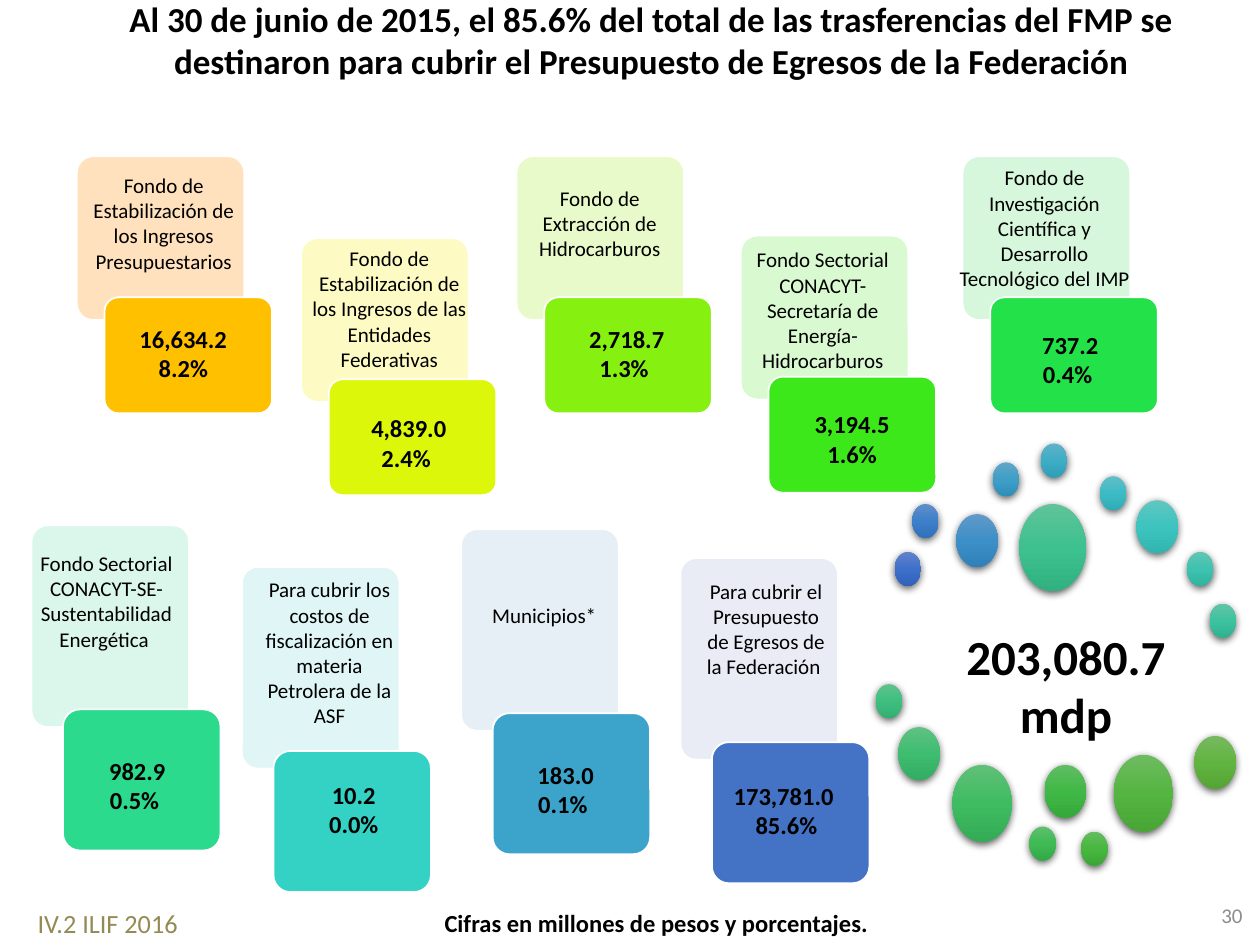
from copy import deepcopy

from pptx import Presentation
from pptx.dml.color import RGBColor
from pptx.enum import shapes, text
from pptx.oxml import parse_xml
from pptx.oxml.ns import nsdecls, qn
from pptx.util import Inches, Pt

FONT = "Calibri"
ALIGN = text.PP_ALIGN
MIDDLE = text.MSO_ANCHOR.MIDDLE
SHAPE = shapes.MSO_SHAPE

# Per row: size of the back panel, offset and size of the front panel, value width
UPPER = {"back": (1.33, 1.3), "front": (0.22, 1.12, 1.33, 0.92), "value_width": 1.33}
LOWER = {"back": (1.25, 1.6), "front": (0.25, 1.46, 1.25, 1.12), "value_width": 1.16}

# Left, top, back colour, front colour, label, label box, value lines, value offset
UPPER_CARDS = [
    (0.61, 1.24, "FFE2BD", "FFC000", "Fondo de Estabilización de los Ingresos Presupuestarios",
     (-0.03, 0.08, 1.44, 0.91), ["16,634.2", "8.2%"], (0.18, 1.28)),
    (2.39, 1.89, "FDFBC3", "DCF709",
     "Fondo de Estabilización de los Ingresos de las Entidades Federativas",
     (-0.05, 0.01, 1.5, 1.11), ["4,839.0", "2.4% "], (0.19, 1.34)),
    (4.1, 1.24, "E9FACA", "86F011", "Fondo de Extracción de Hidrocarburos",
     (-0.01, 0.18, 1.34, 0.71), ["2,718.7", "1.3% "], (0.21, 1.28)),
    (5.88, 1.87, "D9F9D0", "3CE81A",
     "Fondo Sectorial CONACYT-Secretaría de Energía-Hidrocarburos",
     (-0.06, 0.04, 1.42, 1.11), ["3,194.5 ", "1.6% "], (0.24, 1.33)),
    (7.64, 1.24, "D6F7DB", "23E148",
     "Fondo de Investigación Científica y Desarrollo Tecnológico del IMP",
     (-0.14, 0.02, 1.58, 1.11), ["737.2", "0.4% "], (0.19, 1.33)),
]
LOWER_CARDS = [
    (0.25, 4.17, "DBF6EA", "2BDA8C", "Fondo Sectorial CONACYT-SE-Sustentabilidad Energética ",
     (-0.03, 0.15, 1.25, 1.11), ["982.9", "0.5% "], (0.26, 1.78)),
    (1.92, 4.5, "E0F5F5", "33D2C5",
     "Para cubrir los costos de fiscalización en materia Petrolera de la ASF",
     (0.07, 0.03, 1.25, 1.31), ["10.2 ", "0.0% "], (0.33, 1.64)),
    (3.66, 4.2, "E5EFF5", "3CA3CB", "Municipios*",
     (0.07, 0.53, 1.18, 0.3), ["183.0", "0.1% "], (0.25, 1.78)),
    (5.4, 4.43, "E9ECF5", "4472C4", "Para cubrir el Presupuesto de Egresos de la Federación ",
     (0.09, 0.11, 1.18, 0.91), ["173,781.0", " 85.6%"], (0.24, 1.72)),
]

DOT_SIZES = {"S": (0.21, 0.27), "M": (0.33, 0.42), "L": (0.47, 0.61), "XL": (0.53, 0.69)}
# Offset in the ring, size, gradient colours from top to bottom
DOTS = [
    (0.15, 0.86, "S", "6183CB 3E70CA 3062BB"),
    (0.29, 0.48, "S", "618ECA 3D80C9 3071BA"),
    (0.64, 0.56, "M", "619AC9 3D8FC8 3080B9"),
    (0.93, 0.15, "S", "61A6C8 3D9EC7 308FB8"),
    (1.31, 0, "S", "61B2C7 3DADC6 309EB7"),
    (1.78, 0.26, "S", "61BEC7 3DBBC5 30ACB6"),
    (2.07, 0.45, "M", "60C6C1 3DC4BF 30B5B0"),
    (2.47, 0.86, "S", "60C5B4 3DC3AF 30B39F"),
    (2.65, 1.27, "S", "60C4A6 3DC29F 31B28F"),
    (1.14, 0.48, "XL", "60C39A 3DC18F 31B080"),
    (0, 1.91, "S", "60C28E 3EBF7F 32AF71"),
    (0.18, 2.25, "M", "60C182 3EBD70 32AD63"),
    (0.61, 2.55, "L", "60C077 3FBC62 33AC55"),
    (1.22, 3.04, "S", "60BF6D 3FBA54 33AA47"),
    (1.34, 2.55, "M", "60BD64 40B846 34A93A"),
    (1.63, 3.08, "S", "65BC61 48B740 3CA735"),
    (1.89, 2.47, "L", "6EBB61 55B541 49A635"),
    (2.53, 2.32, "M", "77B961 62B441 55A436"),
]


def color(hex_code):
    return RGBColor.from_string(hex_code)


def add_text(slide, box, lines, *, size, fill="000000", bold=False,
             align=ALIGN.CENTER, anchor=text.MSO_ANCHOR.TOP, insets=(0.1, 0.05)):
    frame = slide.shapes.add_textbox(*map(Inches, box)).text_frame
    frame.word_wrap = True
    frame.vertical_anchor = anchor
    frame.margin_left = frame.margin_right = Inches(insets[0])
    frame.margin_top = frame.margin_bottom = Inches(insets[1])
    for number, line in enumerate(lines):
        para = frame.add_paragraph() if number else frame.paragraphs[0]
        para.alignment = align
        span = para.add_run()
        span.text = line
        span.font.name = FONT
        span.font.size = Pt(size)
        span.font.bold = bold
        span.font.color.rgb = color(fill)


def add_panel(slide, box, fill, rounding):
    panel = slide.shapes.add_shape(SHAPE.ROUNDED_RECTANGLE, *map(Inches, box))
    panel.shadow.inherit = False
    panel.adjustments[0] = rounding
    panel.fill.solid()
    panel.fill.fore_color.rgb = color(fill)
    panel.line.color.rgb = color("FFFFFF")
    panel.line.width = Pt(1)


def add_card(slide, layout, left, top, back_fill, front_fill, label, label_box,
             value, value_offset):
    def inside(x, y, width, height):
        return left + x, top + y, width, height

    add_panel(slide, inside(0, 0, *layout["back"]), back_fill, 0.1)
    add_panel(slide, inside(*layout["front"]), front_fill, 0.12)
    add_text(slide, inside(*label_box), [label], size=12)
    add_text(slide, inside(*value_offset, layout["value_width"], 0.57), value,
             size=14, bold=True)


def add_dot(slide, box, fills):
    dot = slide.shapes.add_shape(SHAPE.OVAL, *map(Inches, box))
    dot.line.fill.background()
    dot.fill.gradient()
    dot.fill.gradient_angle = 270
    # The default gradient has two stops; a third is needed
    properties = dot._element.spPr
    stops = properties.find(".//" + qn("a:gsLst"))
    stops.append(deepcopy(stops[0]))
    for stop, fill, position in zip(dot.fill.gradient_stops, fills, (0, 0.5, 1)):
        stop.color.rgb = color(fill)
        stop.position = position
    properties.append(parse_xml(
        f'<a:effectLst {nsdecls("a")}>'
        f'<a:outerShdw blurRad="{Pt(4.5)}" dist="{Pt(1.5)}" dir="5400000" '
        'algn="ctr" rotWithShape="0"><a:srgbClr val="000000">'
        '<a:alpha val="63000"/></a:srgbClr></a:outerShdw></a:effectLst>'))


def add_total(slide, left, top):
    for x, y, size, fills in DOTS:
        add_dot(slide, (left + x, top + y, *DOT_SIZES[size]), fills.split())
    add_text(slide, (left + 0.49, top + 1.37, 2.04, 1.09), ["203,080.7", "mdp"],
             size=28, bold=True, anchor=MIDDLE, insets=(0.07, 0.04))


def add_title(slide, box):
    add_text(slide, box,
             ["Al 30 de junio de 2015, el 85.6% del total de las trasferencias del FMP "
              "se destinaron para cubrir el Presupuesto de Egresos de la Federación"],
             size=20, bold=True, anchor=MIDDLE, insets=(0.1, 0))


def add_footer(slide, left, top):
    add_text(slide, (left, top, 1.65, 0.35), ["IV.2 ILIF 2016"],
             size=15, fill="948A54", align=ALIGN.LEFT)
    add_text(slide, (left + 3.23, top + 0.01, 6.24, 0.34),
             ["Cifras en millones de pesos y porcentajes."],
             size=14, bold=True, align=ALIGN.JUSTIFY)
    add_text(slide, (left + 7.43, top - 0.09, 2.33, 0.4), ["30"],
             size=12, fill="8C8C8C", align=ALIGN.RIGHT, anchor=MIDDLE)


def main():
    deck = Presentation()
    deck.slide_width, deck.slide_height = Inches(10), Inches(7.5)
    slide = deck.slides.add_slide(deck.slide_layouts[6])

    add_title(slide, (0.67, 0, 9, 0.63))
    for layout, cards in ((UPPER, UPPER_CARDS), (LOWER, LOWER_CARDS)):
        for card in cards:
            add_card(slide, layout, *card)
    add_total(slide, 6.95, 3.52)
    add_footer(slide, 0.2, 7.15)

    deck.save("out.pptx")


if __name__ == "__main__":
    main()
